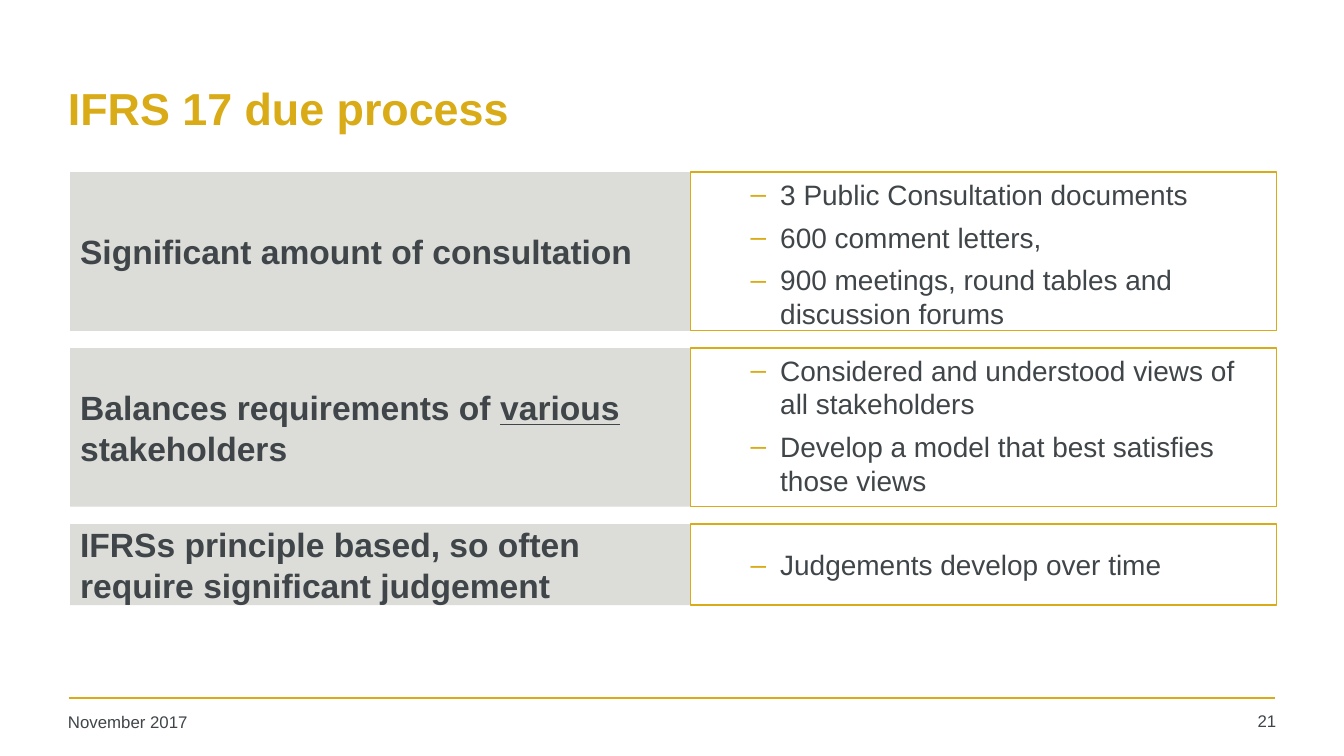
from lxml import etree
from pptx import Presentation
from pptx import util as u
from pptx.dml.color import RGBColor
from pptx.enum import shapes, text
from pptx.oxml import ns

COLORS = {"gold": "D9AB16", "grey": "DCDDD9", "ink": "3F4548"}
MIDDLE = text.MSO_ANCHOR.MIDDLE
TOP = text.MSO_ANCHOR.TOP

ROW_LEFT, ROW_TOP, ROW_WIDTH, ROW_GAP = 37.5, 92.2, 646.5, 9.3
LABEL_WIDTH = 332.6
ROWS = [
    (85, TOP, [("Significant amount of consultation", False)],
     ["3 Public Consultation documents", "600 comment letters,",
      "900 meetings, round tables and discussion forums"]),
    (85, TOP, [("Balances requirements of ", False), ("various", True),
               (" stakeholders", False)],
     ["Considered and understood views of all stakeholders",
      "Develop a model that best satisfies those views"]),
    (43.4, MIDDLE,
     [("IFRSs principle based, so often require significant judgement", False)],
     ["Judgements develop over time"]),
]


def rgb(name):
    return RGBColor.from_string(COLORS[name])


def add_run(paragraph, words, size, color="ink", bold=False, underline=False):
    run = paragraph.add_run()
    run.text = words
    run.font.name = "Arial"
    run.font.size = u.Pt(size)
    run.font.bold = bold
    run.font.underline = underline
    run.font.color.rgb = rgb(color)


def prepare_frame(shape, anchor=TOP):
    frame = shape.text_frame
    frame.word_wrap = True
    frame.auto_size = text.MSO_AUTO_SIZE.NONE
    frame.vertical_anchor = anchor
    frame.margin_left = frame.margin_right = u.Pt(5.4)
    frame.margin_top = frame.margin_bottom = u.Pt(2.7)
    return frame


def add_panel(slide, left, top, width, height, fill=None, line=None):
    panel = slide.shapes.add_shape(
        shapes.MSO_SHAPE.RECTANGLE, u.Pt(left), u.Pt(top), u.Pt(width), u.Pt(height))
    panel.shadow.inherit = False
    if fill:
        panel.fill.solid()
        panel.fill.fore_color.rgb = rgb(fill)
    else:
        panel.fill.background()
    if line:
        panel.line.color.rgb = rgb(line)
        panel.line.width = u.Pt(0.75)
    else:
        panel.line.fill.background()
    return panel


def add_dash(paragraph):
    properties = paragraph._p.get_or_add_pPr()
    properties.set("marL", str(u.Pt(42.5)))
    properties.set("indent", str(u.Pt(-15.8)))
    color = etree.SubElement(properties, ns.qn("a:buClr"))
    etree.SubElement(color, ns.qn("a:srgbClr"), val=COLORS["gold"])
    etree.SubElement(properties, ns.qn("a:buFont"), typeface="Arial")
    etree.SubElement(properties, ns.qn("a:buChar"), char="–")


def add_row(slide, left, top, width, height, anchor, label, points):
    panel = add_panel(slide, left, top, LABEL_WIDTH, height, fill="grey")
    paragraph = prepare_frame(panel, MIDDLE).paragraphs[0]
    paragraph.alignment = text.PP_ALIGN.LEFT
    for words, underline in label:
        add_run(paragraph, words, 18, bold=True, underline=underline)

    panel = add_panel(slide, left + LABEL_WIDTH, top, width - LABEL_WIDTH, height,
                      line="gold")
    frame = prepare_frame(panel, anchor)
    for index, point in enumerate(points):
        paragraph = frame.add_paragraph() if index else frame.paragraphs[0]
        add_dash(paragraph)
        paragraph.level = 1
        paragraph.alignment = text.PP_ALIGN.LEFT
        if index:
            paragraph.space_before = u.Pt(5)
        add_run(paragraph, point, 15)


def add_title(slide, left, top, width, height):
    title = slide.shapes.title
    title.left, title.top = u.Pt(left), u.Pt(top)
    title.width, title.height = u.Pt(width), u.Pt(height)
    paragraph = prepare_frame(title, MIDDLE).paragraphs[0]
    paragraph.alignment = text.PP_ALIGN.LEFT
    add_run(paragraph, "IFRS 17 due process", 24, color="gold", bold=True)


def add_footer(slide, left, top, width):
    rule = slide.shapes.add_connector(
        shapes.MSO_CONNECTOR.STRAIGHT,
        u.Pt(left), u.Pt(top), u.Pt(left + width), u.Pt(top))
    rule.line.color.rgb = rgb("gold")
    rule.line.width = u.Pt(1)
    etree.SubElement(rule._element.spPr, ns.qn("a:effectLst"))

    notes = [
        ("November 2017", left - 5.8, 5, 158.4, text.PP_ALIGN.LEFT),
        ("21", left + width - 45.3, 4.4, 51.1, text.PP_ALIGN.RIGHT),
    ]
    for words, note_left, drop, note_width, alignment in notes:
        box = slide.shapes.add_textbox(
            u.Pt(note_left), u.Pt(top + drop), u.Pt(note_width), u.Pt(20))
        paragraph = prepare_frame(box).paragraphs[0]
        paragraph.alignment = alignment
        add_run(paragraph, words, 9)


def main():
    presentation = Presentation()
    presentation.slide_width = u.Pt(720)
    presentation.slide_height = u.Pt(405)
    slide = presentation.slides.add_slide(presentation.slide_layouts[5])
    add_title(slide, 31, 23.8, 653, 67.7)
    top = ROW_TOP
    for height, anchor, label, points in ROWS:
        add_row(slide, ROW_LEFT, top, ROW_WIDTH, height, anchor, label, points)
        top += height + ROW_GAP
    add_footer(slide, 36.8, 373.8, 646.5)
    presentation.save("out.pptx")


if __name__ == "__main__":
    main()
